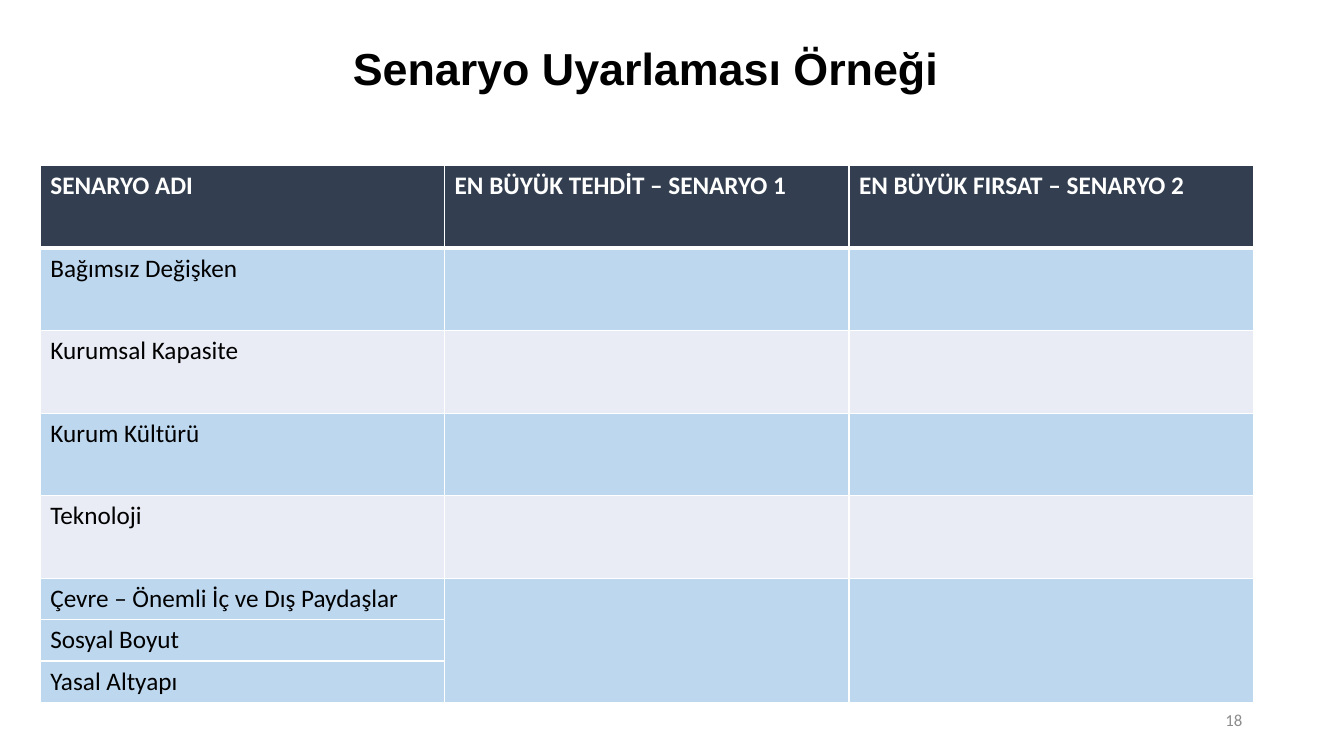
from lxml.etree import SubElement
from pptx import Presentation
from pptx.dml.color import RGBColor
from pptx.enum.text import MSO_ANCHOR, PP_ALIGN
from pptx.oxml.ns import qn
from pptx.util import Inches, Pt

COLORS = {
    "header": "333F50",
    "blue": "BDD7EE",
    "pale": "E9EBF5",
    "white": "FFFFFF",
    "black": "000000",
    "gray": "8C8C8C",
}
HEADERS = ["SENARYO ADI", "EN BÜYÜK TEHDİT – SENARYO 1", "EN BÜYÜK FIRSAT – SENARYO 2"]
# Label, fill and height of each row below the header
ROWS = [
    ("Bağımsız Değişken", "blue", 0.82),
    ("Kurumsal Kapasite", "pale", 0.82),
    ("Kurum Kültürü", "blue", 0.82),
    ("Teknoloji", "pale", 0.82),
    ("Çevre – Önemli İç ve Dış Paydaşlar", "blue", 0.41),
    ("Sosyal Boyut", "blue", 0.41),
    ("Yasal Altyapı", "blue", 0.41),
]
MERGED_FIRST_ROW = 5
COLUMN_WIDTH = 4.01


def style_paragraph(paragraph, font_name, size, color, bold=False):
    font = paragraph.font
    font.name, font.size, font.bold = font_name, Pt(size), bold
    font.color.rgb = RGBColor.from_string(COLORS[color])


def add_borders(cell, top=1, bottom=1):
    """Give the cell white borders; call before setting its fill."""
    properties = cell._tc.get_or_add_tcPr()
    for side, width in (("L", 1), ("R", 1), ("T", top), ("B", bottom)):
        line = SubElement(properties, qn(f"a:ln{side}"), w=str(Pt(width)))
        solid = SubElement(line, qn("a:solidFill"))
        SubElement(solid, qn("a:srgbClr"), val=COLORS["white"])


presentation = Presentation()
presentation.slide_width = Inches(13.33)
presentation.slide_height = Inches(7.5)
slide = presentation.slides.add_slide(presentation.slide_layouts[6])

# Title and slide number
text_boxes = [
    ("Senaryo Uyarlaması Örneği", (1.72, 0.33, 9.37, 0.75), PP_ALIGN.CENTER,
     ("Arial", 32, "black", True)),
    ("18", (9.42, 6.95, 3, 0.4), PP_ALIGN.RIGHT, ("Calibri", 12, "gray")),
]
for text, box, alignment, style in text_boxes:
    frame = slide.shapes.add_textbox(*map(Inches, box)).text_frame
    frame.word_wrap = True
    frame.vertical_anchor = MSO_ANCHOR.MIDDLE
    frame.text = text
    paragraph = frame.paragraphs[0]
    paragraph.alignment = alignment
    paragraph.line_spacing = 0.9
    style_paragraph(paragraph, *style)

# Scenario table
table_rows = [(HEADERS, "header", 0.82)]
table_rows += [([label, "", ""], fill, height) for label, fill, height in ROWS]
table = slide.shapes.add_table(
    len(table_rows), len(HEADERS), Inches(0.4), Inches(1.64),
    Inches(COLUMN_WIDTH * len(HEADERS)), Inches(sum(row[2] for row in table_rows)),
).table
for column in table.columns:
    column.width = Inches(COLUMN_WIDTH)

for row_index, (texts, fill, height) in enumerate(table_rows):
    is_header = row_index == 0
    table.rows[row_index].height = Inches(height)
    for column_index, text in enumerate(texts):
        cell = table.cell(row_index, column_index)
        add_borders(cell, top=3 if row_index == 1 else 1, bottom=3 if is_header else 1)
        cell.fill.solid()
        cell.fill.fore_color.rgb = RGBColor.from_string(COLORS[fill])
        cell.text = text
        style_paragraph(cell.text_frame.paragraphs[0], "Calibri", 18,
                        "white" if is_header else "black", is_header)

for column_index in (1, 2):
    table.cell(MERGED_FIRST_ROW, column_index).merge(table.cell(len(ROWS), column_index))

presentation.save("out.pptx")
